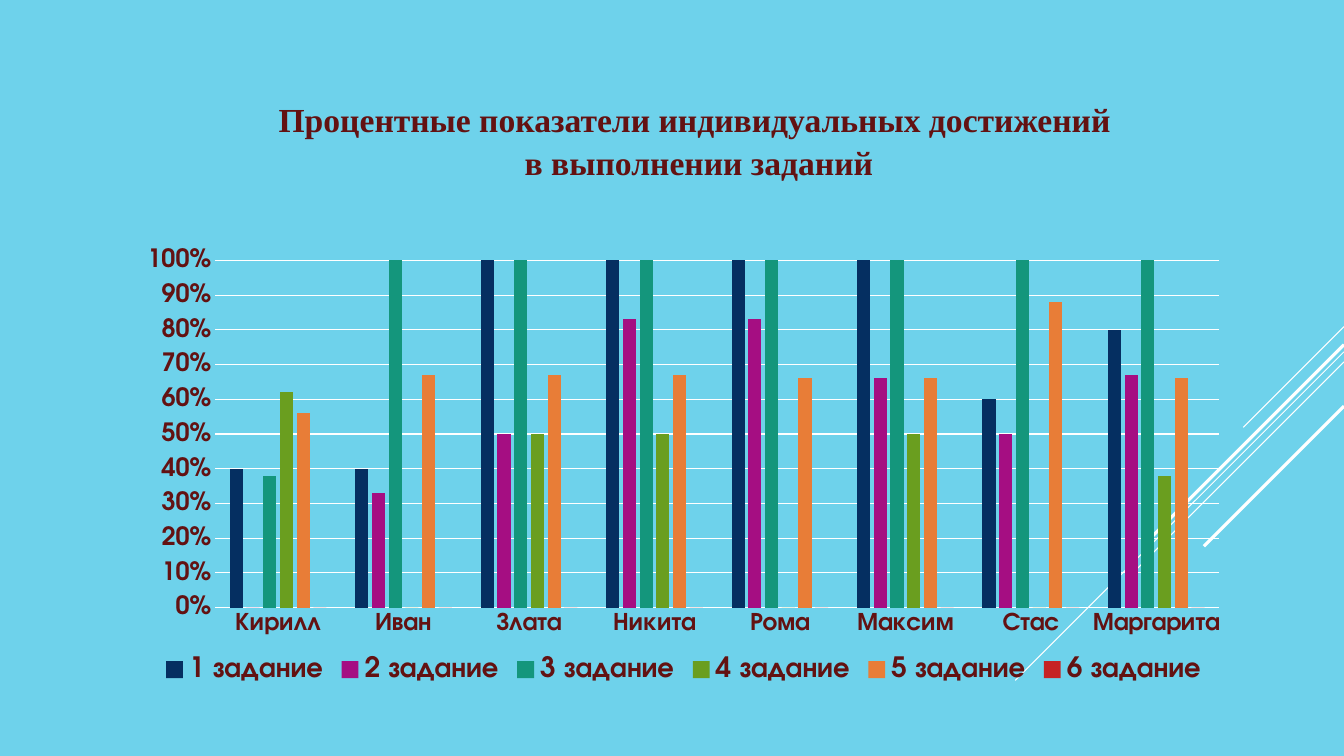
"""Build a slide charting each child's results across six tasks."""
from dataclasses import dataclass

from pptx import Presentation
from pptx import util as u
from pptx.chart.data import CategoryChartData
from pptx.dml.color import RGBColor
from pptx.enum import chart as ch, shapes, text
from pptx.oxml import ns, xmlchemy

COLS, ROWS = 1333, 750
WIDE, HIGH = u.Inches(13.33), u.Inches(7.5)


@dataclass(frozen=True)
class Theme:
    sky: str = "6ED2EB"
    white: str = "FFFFFF"
    wine: str = "631212"
    serif: str = "Times New Roman"
    sans: str = "TeX Gyre Adventor"
    head: int = 24
    key: int = 20
    label: int = 18
    base: int = 10
    hair: float = 0.75
    bold: float = 2.25


@dataclass(frozen=True)
class Ray:
    top: int
    run: int
    weight: float


@dataclass(frozen=True)
class Task:
    color: str
    vals: tuple[float, ...]


THEME = Theme()
TITLE = ("Процентные показатели индивидуальных достижений",
         " в выполнении заданий")
RAYS = (
    Ray(324, 100, THEME.hair),
    Ray(349, 326, THEME.hair),
    Ray(359, 207, THEME.hair),
    Ray(342, 191, THEME.bold),
    Ray(403, 139, THEME.bold),
)
NAMES = ("Кирилл", "Иван", "Злата", "Никита", "Рома", "Максим", "Стас", "Маргарита")
TASKS = (
    Task("052F61", (0.4, 0.4, 1, 1, 1, 1, 0.6, 0.8)),
    Task("A50E82", (0, 0.33, 0.5, 0.83, 0.83, 0.66, 0.5, 0.67)),
    Task("14967C", (0.38, 1, 1, 1, 1, 1, 1, 1)),
    Task("6A9E1F", (0.62, 0, 0.5, 0.5, 0, 0.5, 0, 0.38)),
    Task("E87D37", (0.56, 0.67, 0.67, 0.67, 0.66, 0.66, 0.88, 0.66)),
    Task("C62324", (0,) * len(NAMES)),
)


def col(count: float) -> int:
    return round(WIDE * count / COLS)


def row(count: float) -> int:
    return round(HIGH * count / ROWS)


def rgb(code: str) -> RGBColor:
    return RGBColor.from_string(code)


def style(font, size: int, face: str, color: str = THEME.wine, bold: bool = True) -> None:
    font.size, font.name, font.bold = u.Pt(size), face, bold
    font.color.rgb = rgb(color)


def stroke(line, weight: float) -> None:
    line.color.rgb = rgb(THEME.white)
    line.width = u.Pt(weight)


def draw_ray(slide, ray: Ray) -> None:
    line = slide.shapes.add_connector(
        shapes.MSO_CONNECTOR.STRAIGHT, col(COLS), row(ray.top),
        col(COLS - ray.run), row(ray.top + ray.run))
    stroke(line.line, ray.weight)
    line.element.spPr.append(xmlchemy.OxmlElement("a:effectLst"))


def draw_title(slide) -> None:
    title = slide.shapes.title
    title.left, title.top, title.width, title.height = col(23), row(90), col(1263), row(97)
    frame = title.text_frame
    frame.text = "\n".join(TITLE)
    frame.word_wrap = True
    frame.auto_size = text.MSO_AUTO_SIZE.SHAPE_TO_FIT_TEXT
    frame.vertical_anchor = text.MSO_ANCHOR.TOP
    for para in frame.paragraphs:
        para.alignment = text.PP_ALIGN.CENTER
        para.line_spacing = 1.07
        para.space_before = u.Pt(0)
        style(para.font, THEME.head, THEME.serif)
        props = para.font._element.getparent()
        props.set("marL", str(col(20)))
        props.set("indent", str(col(49)))


def draw_chart(slide) -> None:
    data = CategoryChartData(number_format="0%")
    data.categories = NAMES
    for count, task in enumerate(TASKS, 1):
        data.add_series(f"{count} задание", task.vals)
    chart = slide.shapes.add_chart(
        ch.XL_CHART_TYPE.COLUMN_CLUSTERED, col(124), row(238),
        col(1108), row(445), data).chart
    style(chart.font, THEME.base, THEME.sans, THEME.white, False)
    chart.has_title = False
    chart.has_legend = True
    key = chart.legend
    key.position = ch.XL_LEGEND_POSITION.BOTTOM
    key.include_in_layout = False
    style(key.font, THEME.key, THEME.sans)

    plot = chart.plots[0]
    plot.gap_width, plot.overlap, plot.vary_by_categories = 219, -27, False
    for bars, task in zip(plot.series, TASKS):
        bars.format.fill.solid()
        bars.format.fill.fore_color.rgb = rgb(task.color)
        bars.invert_if_negative = False

    names, scale = chart.category_axis, chart.value_axis
    for axis in (names, scale):
        axis.major_tick_mark = axis.minor_tick_mark = ch.XL_TICK_MARK.NONE
        style(axis.tick_labels.font, THEME.label, THEME.sans)
    stroke(names.format.line, THEME.hair)
    scale.format.line.fill.background()
    scale.minimum_scale, scale.maximum_scale, scale.major_unit = 0, 1, 0.1
    scale.tick_labels.number_format = "0%"
    scale.tick_labels.number_format_is_linked = False
    scale.has_major_gridlines = True
    stroke(scale.major_gridlines.format.line, THEME.hair)
    for body in names._element.iter(ns.qn("a:bodyPr")):
        body.set("rot", "-60000000")
        body.set("vert", "horz")


def main() -> None:
    deck = Presentation()
    deck.slide_width, deck.slide_height = WIDE, HIGH
    slide = deck.slides.add_slide(deck.slide_layouts[5])
    fill = slide.background.fill
    fill.solid()
    fill.fore_color.rgb = rgb(THEME.sky)
    for ray in RAYS:
        draw_ray(slide, ray)
    draw_chart(slide)
    draw_title(slide)
    deck.save("out.pptx")


if __name__ == "__main__":
    main()
